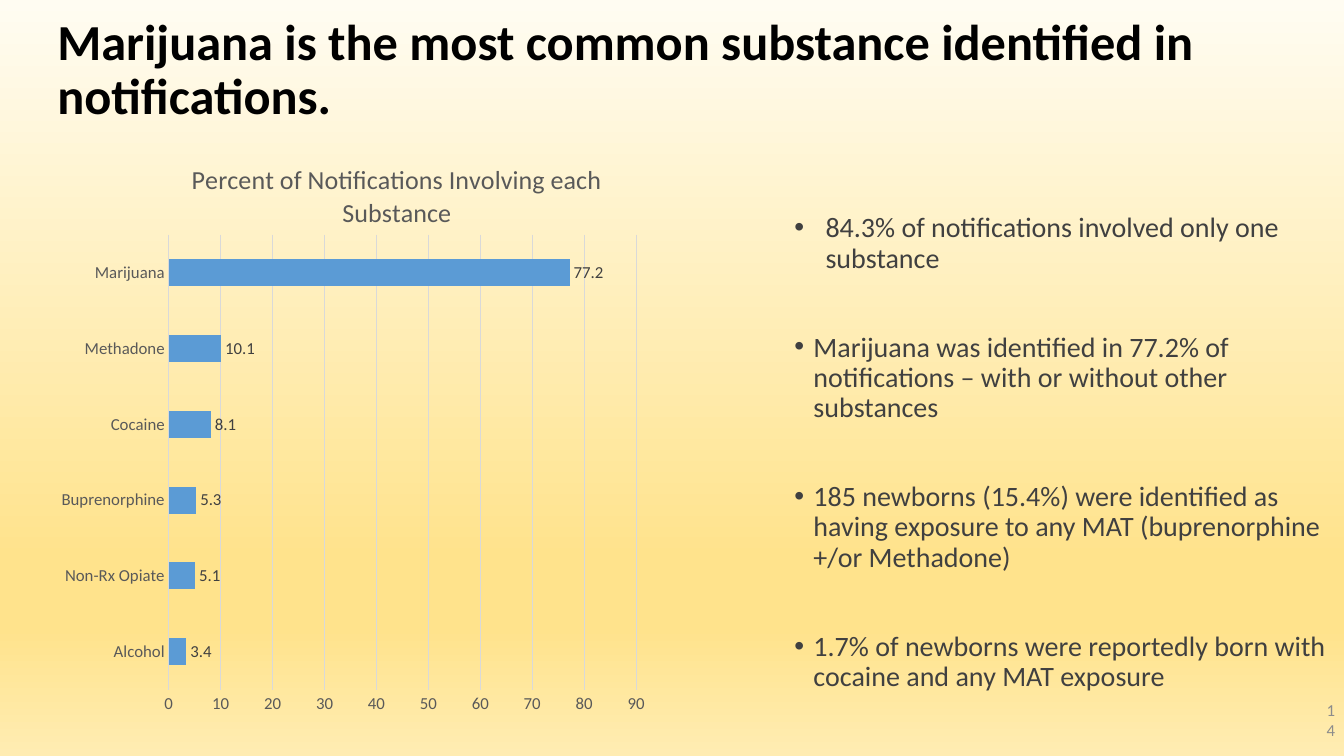
from lxml.etree import SubElement
from pptx import Presentation
from pptx.chart.data import CategoryChartData
from pptx.dml.color import RGBColor
from pptx.enum.chart import XL_CHART_TYPE, XL_LABEL_POSITION, XL_TICK_MARK
from pptx.enum.text import MSO_ANCHOR, PP_ALIGN
from pptx.oxml import parse_xml
from pptx.oxml.ns import nsdecls, qn
from pptx.util import Inches, Pt

BACKGROUND_STOPS = [(0, "FFFCF2"), (74, "FFE38C"), (83, "FFE38C"), (100, "FFECB2")]
SUBSTANCES = {
    "Alcohol": 3.4,
    "Non-Rx Opiate": 5.1,
    "Buprenorphine": 5.3,
    "Cocaine": 8.1,
    "Methadone": 10.1,
    "Marijuana": 77.2,
}
FINDINGS = [
    "84.3% of notifications involved only one substance",
    "Marijuana was identified in 77.2% of notifications – with or without other substances",
    "185 newborns (15.4%) were identified as having exposure to any MAT "
    "(buprenorphine +/or Methadone)",
    "1.7% of newborns were reportedly born with cocaine and any MAT exposure",
]


def color(value):
    return RGBColor.from_string(value)


class SlideBuilder:
    font_name = "Calibri"
    black, dark, medium, light = "000000", "404040", "595959", "8C8C8C"
    grid, bar = "D9D9D9", "5B9BD5"

    def __init__(self, slide):
        self.slide = slide

    def style(self, font, size, value, bold=False):
        font.name, font.size, font.bold = self.font_name, Pt(size), bold
        font.color.rgb = color(value)

    def background(self, stops):
        fill = self.slide.background.fill
        fill.gradient()
        fill.gradient_angle = 270
        stop_list = next(self.slide.element.iter(qn("a:gsLst")))
        for stop in list(stop_list):
            stop_list.remove(stop)
        for percent, value in stops:
            stop = SubElement(stop_list, qn("a:gs"), pos=str(percent * 1000))
            SubElement(stop, qn("a:srgbClr"), val=value)

    def text_frame(self, left, top, width, height, anchor):
        box = self.slide.shapes.add_textbox(
            Inches(left), Inches(top), Inches(width), Inches(height))
        frame = box.text_frame
        frame.word_wrap = True
        frame.vertical_anchor = anchor
        return frame

    def add_run(self, paragraph, text, size, value, bold=False):
        run = paragraph.add_run()
        run.text = text
        self.style(run.font, size, value, bold)

    def line(self, place, text, size, value, bold=False, align=PP_ALIGN.LEFT):
        paragraph = self.text_frame(*place, MSO_ANCHOR.MIDDLE).paragraphs[0]
        paragraph.alignment = align
        paragraph.line_spacing = 0.9 if bold else 1.0
        self.add_run(paragraph, text, size, value, bold)

    def bullets(self, place, items):
        frame = self.text_frame(*place, MSO_ANCHOR.TOP)
        for index, item in enumerate(items):
            paragraph = frame.add_paragraph() if index else frame.paragraphs[0]
            indent = Inches(0.19 if index else 0.31)
            properties = paragraph._p.get_or_add_pPr()
            properties.set("marL", str(indent))
            properties.set("indent", str(-indent))
            SubElement(properties, qn("a:buFont"), typeface="Arial")
            SubElement(properties, qn("a:buChar"), char="•")
            paragraph.line_spacing = 0.9
            if index:
                paragraph.space_before = Pt(42)
            self.add_run(paragraph, item, 20, self.dark)

    def bar_chart(self, place, title, values):
        data = CategoryChartData()
        data.categories = list(values)
        data.add_series("Series 1", list(values.values()))
        chart = self.slide.shapes.add_chart(
            XL_CHART_TYPE.BAR_CLUSTERED, *map(Inches, place), data).chart
        self.style(chart.font, 10, self.black)
        chart.has_legend = False

        paragraph = chart.chart_title.text_frame.paragraphs[0]
        self.add_run(paragraph, title, 18.6, self.medium)
        chart.chart_title.include_in_layout = False

        for axis in (chart.category_axis, chart.value_axis):
            axis.major_tick_mark = axis.minor_tick_mark = XL_TICK_MARK.NONE
            self.style(axis.tick_labels.font, 12, self.medium)
        value_axis = chart.value_axis
        value_axis.minimum_scale, value_axis.maximum_scale = 0, 90
        value_axis.major_unit = 10
        value_axis.format.line.fill.background()
        for line in (chart.category_axis.format.line,
                     value_axis.major_gridlines.format.line):
            line.color.rgb = color(self.grid)
            line.width = Pt(0.75)

        plot = chart.plots[0]
        plot.gap_width = 182
        plot.vary_by_categories = False
        series = plot.series[0]
        series.format.fill.solid()
        series.format.fill.fore_color.rgb = color(self.bar)
        labels = series.data_labels
        labels.show_value = True
        labels.position = XL_LABEL_POSITION.OUTSIDE_END
        self.style(labels.font, 12, self.dark)

        title_element = chart.chart_title._element
        self.set_layout(title_element, 1, x=0.23, y=0.05)
        plot_area = next(chart._chartSpace.iter(qn("c:plotArea")))
        self.set_layout(plot_area, 0, x=0.2, y=0.18, w=0.77, h=0.76)

    def set_layout(self, element, position, **fractions):
        """Place a chart part by fractions of the chart's size."""
        for old in element.findall(qn("c:layout")):
            element.remove(old)
        target = '<c:layoutTarget val="inner"/>' if "w" in fractions else ""
        modes = "".join(f'<c:{key}Mode val="edge"/>' for key in "xy")
        sizes = "".join(f'<c:{key} val="{value}"/>' for key, value in fractions.items())
        element.insert(position, parse_xml(
            f'<c:layout {nsdecls("c")}><c:manualLayout>'
            f"{target}{modes}{sizes}</c:manualLayout></c:layout>"))


def main():
    presentation = Presentation()
    presentation.slide_width, presentation.slide_height = Inches(13.33), Inches(7.5)
    builder = SlideBuilder(presentation.slides.add_slide(presentation.slide_layouts[6]))
    builder.background(BACKGROUND_STOPS)
    builder.line((0.47, 0.47, 12.54, 0.47),
                 "Marijuana is the most common substance identified in notifications.",
                 36, builder.black, bold=True)
    builder.bar_chart((0.47, 1.26, 6.02, 5.94),
                      "Percent of Notifications Involving each Substance", SUBSTANCES)
    builder.line((13.02, 6.98, 0.32, 0.32), "14", 12, builder.light, align=PP_ALIGN.RIGHT)
    builder.bullets((7.78, 2.07, 5.56, 4.91), FINDINGS)
    presentation.save("out.pptx")


if __name__ == "__main__":
    main()
